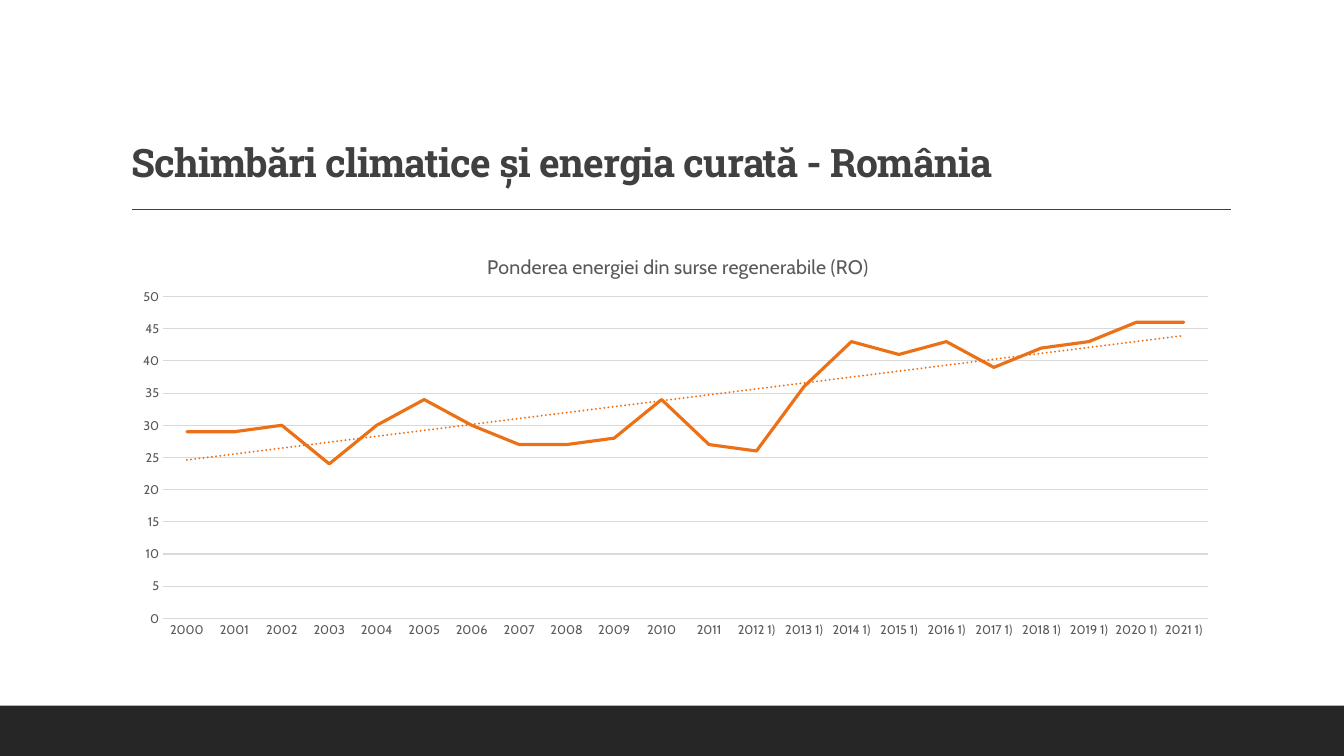
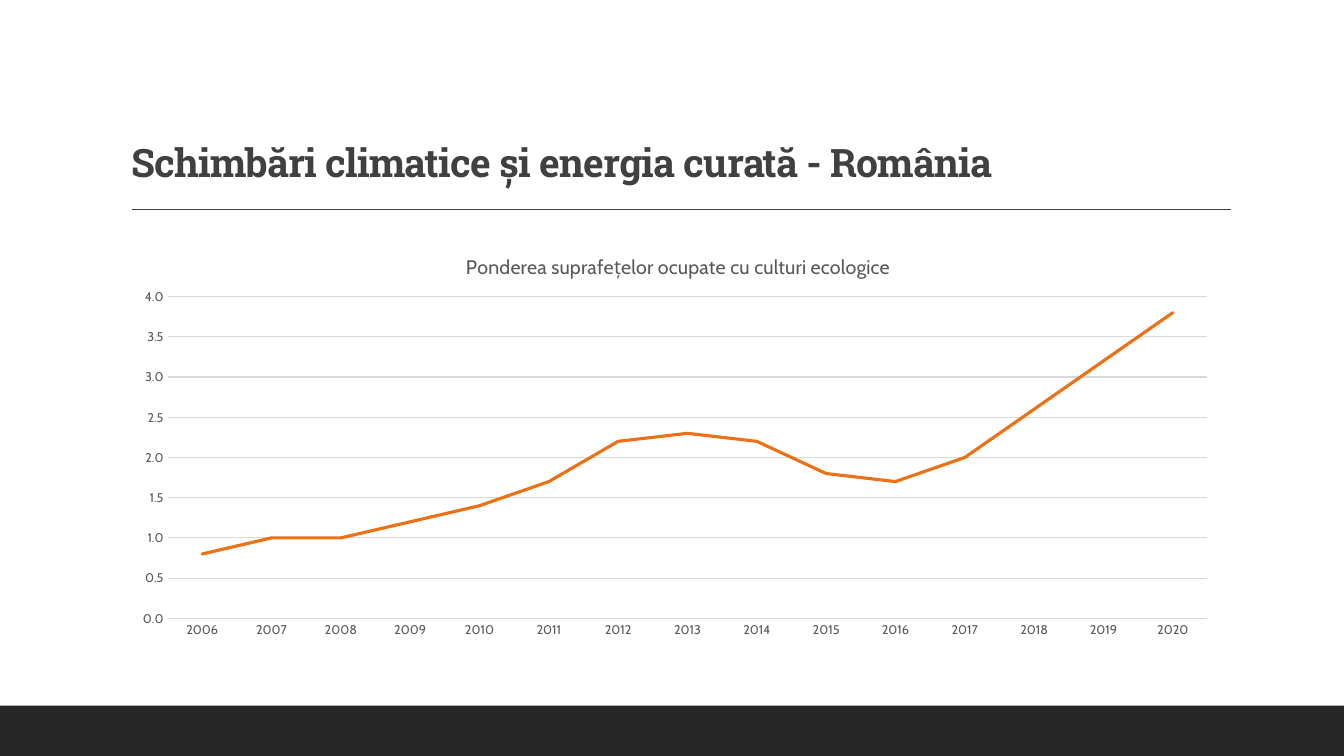
from dataclasses import dataclass

from lxml.etree import SubElement
from pptx import Presentation
from pptx.chart.data import CategoryChartData
from pptx.dml.color import RGBColor
from pptx.enum.chart import XL_CHART_TYPE, XL_TICK_MARK
from pptx.enum.dml import MSO_LINE
from pptx.enum.shapes import MSO_CONNECTOR, MSO_SHAPE
from pptx.enum.text import MSO_ANCHOR, MSO_AUTO_SIZE, PP_ALIGN
from pptx.oxml import parse_xml
from pptx.oxml.ns import nsdecls, qn
from pptx.util import Pt


@dataclass(frozen=True)
class Theme:
    ink: RGBColor = RGBColor(0x40, 0x40, 0x40)
    band: RGBColor = RGBColor(0x26, 0x26, 0x26)
    label: RGBColor = RGBColor(0x59, 0x59, 0x59)
    grid: RGBColor = RGBColor(0xD9, 0xD9, 0xD9)
    accent: str = "EC7016"
    heading_font: str = "Roboto Slab"
    body_font: str = "Cabin"
    title_size: int = 28
    chart_title_size: int = 14
    label_size: int = 9


class SlideBuilder:
    def __init__(self, deck, theme):
        self.deck = deck
        self.theme = theme
        self.slide = None

    def start_slide(self, title):
        self.slide = self.deck.slides.add_slide(self.deck.slide_layouts[5])
        self.add_band()
        self.add_rule()
        self.set_title(title)

    def add_band(self):
        band = self.slide.shapes.add_shape(
            MSO_SHAPE.RECTANGLE, 0, Pt(504), self.deck.slide_width, Pt(36))
        band.shadow.inherit = False
        band.fill.solid()
        band.fill.fore_color.rgb = self.theme.band
        band.line.fill.background()

    def add_rule(self):
        rule = self.slide.shapes.add_connector(
            MSO_CONNECTOR.STRAIGHT, Pt(94.5), Pt(149.6), Pt(879), Pt(149.6))
        self.style_line(rule.line, self.theme.ink, 1)
        SubElement(rule._element.spPr, qn("a:effectLst"))

    def set_title(self, text):
        box = self.slide.shapes.title
        box.left, box.top, box.width, box.height = Pt(86.4), Pt(22.3), Pt(792), Pt(114.5)
        frame = box.text_frame
        frame.auto_size = MSO_AUTO_SIZE.NONE
        frame.word_wrap = True
        frame.vertical_anchor = MSO_ANCHOR.BOTTOM
        para = frame.paragraphs[0]
        para.alignment = PP_ALIGN.LEFT
        para.line_spacing = 0.9
        span = para.add_run()
        span.text = text
        self.style_font(span.font, self.theme.heading_font, self.theme.title_size,
                        self.theme.ink, bold=True)
        span.font._element.set("spc", "-50")

    def add_line_chart(self, title, points, title_left, plot_left, number_format="General"):
        """Draw one series; title_left and plot_left are fractions of the chart width."""
        data = CategoryChartData(number_format=number_format)
        data.categories = list(points)
        data.add_series(title, list(points.values()))
        chart = self.slide.shapes.add_chart(
            XL_CHART_TYPE.LINE, Pt(86.4), Pt(166.3), Pt(792), Pt(295.9), data).chart
        chart.has_legend = False
        self.style_font(chart.font, self.theme.body_font, self.theme.label_size, self.theme.label)
        self.set_chart_title(chart, title, title_left)
        self.style_axes(chart, number_format)
        plot_area = chart._chartSpace.chart.plotArea
        self.place(plot_area, 0, x=plot_left, y=0.154, w=0.98 - plot_left, h=0.777)
        chart.plots[0].vary_by_categories = False
        series = chart.plots[0].series[0]
        series.smooth = False
        self.style_line(series.format.line, RGBColor.from_string(self.theme.accent), 2.25)
        series.format.line._ln.set("cap", "rnd")
        return series

    def set_chart_title(self, chart, text, left):
        heading = chart.chart_title
        span = heading.text_frame.paragraphs[0].add_run()
        span.text = text
        self.style_font(span.font, self.theme.body_font, self.theme.chart_title_size,
                        self.theme.label)
        heading.include_in_layout = False
        self.place(heading._element, 1, x=left, y=0.04)

    def style_axes(self, chart, number_format):
        for axis in (chart.category_axis, chart.value_axis):
            axis.major_tick_mark = axis.minor_tick_mark = XL_TICK_MARK.NONE
            self.style_font(axis.tick_labels.font, self.theme.body_font,
                            self.theme.label_size, self.theme.label)
        self.style_line(chart.category_axis.format.line, self.theme.grid, 0.75)
        values = chart.value_axis
        values.minimum_scale = 0
        values.tick_labels.number_format = number_format
        values.tick_labels.number_format_is_linked = False
        values.format.line.fill.background()
        self.style_line(values.major_gridlines.format.line, self.theme.grid, 0.75)

    def add_trend(self, series):
        """Add a dotted linear trend line to a chart series."""
        trend = parse_xml(
            f'<c:trendline {nsdecls("c", "a")}><c:spPr><a:ln w="{Pt(1.5)}" cap="rnd">'
            f'<a:solidFill><a:srgbClr val="{self.theme.accent}"/></a:solidFill>'
            f'<a:prstDash val="{MSO_LINE.to_xml(MSO_LINE.ROUND_DOT)}"/></a:ln></c:spPr>'
            '<c:trendlineType val="linear"/><c:dispRSqr val="0"/><c:dispEq val="0"/>'
            '</c:trendline>')
        series._element.find(qn("c:cat")).addprevious(trend)

    @staticmethod
    def place(element, index, **fractions):
        """Give a chart part a manual layout, inserted as child number index."""
        for old in element.findall(qn("c:layout")):
            element.remove(old)
        layout = parse_xml(f'<c:layout {nsdecls("c")}><c:manualLayout/></c:layout>')
        manual = layout[0]
        if "w" in fractions:
            SubElement(manual, qn("c:layoutTarget")).set("val", "inner")
        for mode in ("xMode", "yMode"):
            SubElement(manual, qn(f"c:{mode}")).set("val", "edge")
        for name, value in fractions.items():
            SubElement(manual, qn(f"c:{name}")).set("val", f"{value:.3f}")
        element.insert(index, layout)

    @staticmethod
    def style_font(font, name, size, color, bold=False):
        font.name = name
        font.size = Pt(size)
        font.bold = bold
        font.color.rgb = color

    @staticmethod
    def style_line(line, color, width):
        line.color.rgb = color
        line.width = Pt(width)


def main():
    deck = Presentation()
    deck.slide_width, deck.slide_height = Pt(960), Pt(540)
    builder = SlideBuilder(deck, Theme())
    title = "Schimbări climatice și energia curată - România"

    shares = [29, 29, 30, 24, 30, 34, 30, 27, 27, 28, 34,
              27, 26, 36, 43, 41, 43, 39, 42, 43, 46, 46]
    renewable = {f"{year} 1)" if year >= 2012 else str(year): share
                 for year, share in enumerate(shares, 2000)}
    builder.start_slide(title)
    series = builder.add_line_chart("Ponderea energiei din surse regenerabile (RO)",
                                    renewable, title_left=0.327, plot_left=0.038)
    builder.add_trend(series)

    shares = [0.8, 1, 1, 1.2, 1.4, 1.7, 2.2, 2.3, 2.2, 1.8, 1.7, 2, 2.6, 3.2, 3.8]
    organic = {str(year): share for year, share in enumerate(shares, 2006)}
    builder.start_slide(title)
    builder.add_line_chart("Ponderea suprafețelor ocupate cu culturi ecologice",
                           organic, title_left=0.308, plot_left=0.042, number_format="0.0")

    deck.save("out.pptx")


if __name__ == "__main__":
    main()
